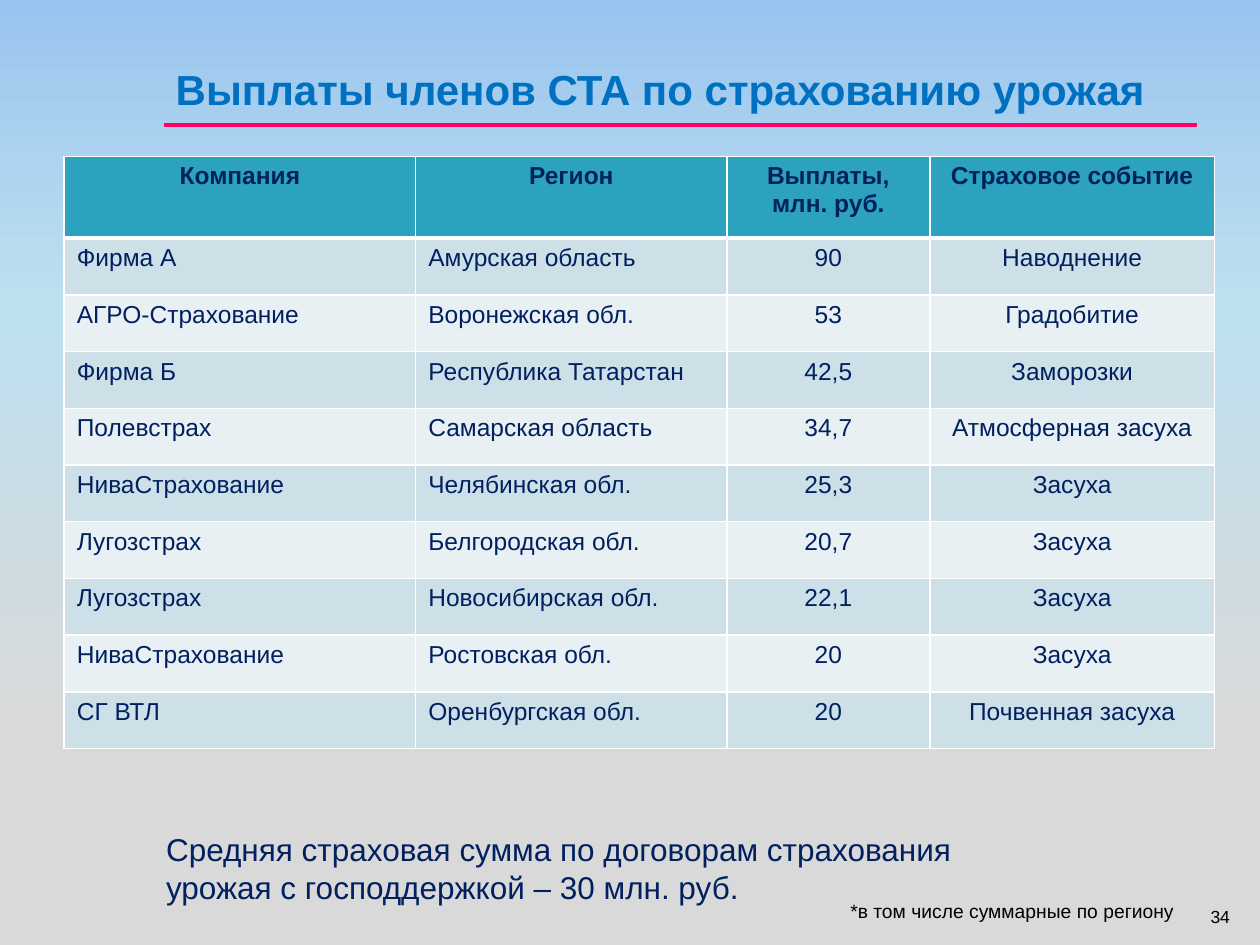
from copy import deepcopy
from typing import NamedTuple

from lxml import etree
from pptx import Presentation
from pptx.dml.color import RGBColor
from pptx.enum.shapes import MSO_CONNECTOR
from pptx.enum.text import MSO_ANCHOR, PP_ALIGN
from pptx.oxml.ns import qn
from pptx.util import Inches, Pt

LEFT, CENTER, RIGHT = PP_ALIGN.LEFT, PP_ALIGN.CENTER, PP_ALIGN.RIGHT
TOP, BOTTOM = MSO_ANCHOR.TOP, MSO_ANCHOR.BOTTOM
STRAIGHT = MSO_CONNECTOR.STRAIGHT

FONT = "Arial"
COLORS = {
    "title": "0070C0", "rule": "FF0066", "navy": "002060", "black": "000000",
    "header": "2DA2BF", "odd": "CDE0E8", "even": "E8F0F4", "border": "FFFFFF",
}
BACKGROUND_STOPS = [(0, "99C4EF"), (0.32, "BDE0EF"), (0.78, "D9D9D9")]


class Payout(NamedTuple):
    company: str
    region: str
    amount: str
    event: str


class Note(NamedTuple):
    left: float
    top: float
    width: float
    height: float
    lines: list[str]
    size: int
    color: str
    align: PP_ALIGN = LEFT
    anchor: MSO_ANCHOR = TOP
    wrap: bool = True


HEADER = Payout("Компания", "Регион", "Выплаты, млн. руб.", "Страховое событие")
PAYOUTS = [
    Payout("Фирма А", "Амурская область", "90", "Наводнение"),
    Payout("АГРО-Страхование", "Воронежская обл.", "53", "Градобитие"),
    Payout("Фирма Б", "Республика Татарстан", "42,5", "Заморозки"),
    Payout("Полевстрах", "Самарская область", "34,7", "Атмосферная засуха"),
    Payout("НиваСтрахование", "Челябинская обл.", "25,3", "Засуха"),
    Payout("Лугозстрах", "Белгородская обл.", "20,7", "Засуха"),
    Payout("Лугозстрах", "Новосибирская обл.", "22,1", "Засуха"),
    Payout("НиваСтрахование", "Ростовская обл.", "20", "Засуха"),
    Payout("СГ ВТЛ", "Оренбургская обл.", "20", "Почвенная засуха"),
]
COLUMN_WIDTHS = [2.79, 2.47, 1.61, 2.26]
COLUMN_ALIGNS = [LEFT, LEFT, CENTER, CENTER]
HEADER_HEIGHT, ROW_HEIGHT = 0.65, 0.45

NOTES = [
    Note(9.46, 7.01, 0.4, 0.4, ["34"], 10, "black", RIGHT, BOTTOM),
    Note(6.65, 7.09, 2.91, 0.29, ["*в том числе суммарные по региону"], 11, "black"),
    Note(1.22, 6.54, 6.57, 0.71,
         ["Средняя страховая сумма по договорам страхования",
          "урожая с господдержкой – 30 млн. руб."], 18, "navy", wrap=False),
]


def rgb(name: str) -> RGBColor:
    return RGBColor.from_string(COLORS[name])


def style(para, size: int, color: str, align: PP_ALIGN, bold: bool = False) -> None:
    para.alignment = align
    para.font.name = FONT
    para.font.size = Pt(size)
    para.font.bold = bold
    para.font.color.rgb = rgb(color)


def paint_background(slide) -> None:
    fill = slide.background.fill
    fill.gradient()
    fill.gradient_angle = 270
    stop_list = slide.element.find(".//" + qn("a:gsLst"))
    stop_list.append(deepcopy(stop_list[-1]))
    for stop, (position, color) in zip(fill.gradient_stops, BACKGROUND_STOPS):
        stop.position = position
        stop.color.rgb = RGBColor.from_string(color)


def add_title(slide, text: str) -> None:
    title = slide.shapes.title
    title.left, title.top = Inches(1.1), Inches(0.45)
    title.width, title.height = Inches(8.28), Inches(0.5)
    title.text_frame.text = text
    title.text_frame.vertical_anchor = TOP
    style(title.text_frame.paragraphs[0], 24, "title", CENTER, bold=True)


def add_rule(slide) -> None:
    rule = slide.shapes.add_connector(
        STRAIGHT, Inches(1.3), Inches(0.99), Inches(9.5), Inches(0.99))
    rule.line.color.rgb = rgb("rule")
    rule.line.width = Pt(2.5)
    etree.SubElement(rule.element.spPr, qn("a:effectLst"))


def set_borders(cell, top: int, bottom: int) -> None:
    properties = cell._tc.get_or_add_tcPr()
    widths = {"a:lnL": 1, "a:lnR": 1, "a:lnT": top, "a:lnB": bottom}
    for index, (tag, width) in enumerate(widths.items()):
        line = etree.Element(qn(tag), w=str(Pt(width)))
        solid = etree.SubElement(line, qn("a:solidFill"))
        etree.SubElement(solid, qn("a:srgbClr"), val=COLORS["border"])
        properties.insert(index, line)


def add_payout_table(slide) -> None:
    rows = [HEADER, *PAYOUTS]
    table = slide.shapes.add_table(
        len(rows), len(COLUMN_WIDTHS), Inches(0.51), Inches(1.24),
        Inches(sum(COLUMN_WIDTHS)), Inches(HEADER_HEIGHT + ROW_HEIGHT * len(PAYOUTS))).table
    for column, width in zip(table.columns, COLUMN_WIDTHS):
        column.width = Inches(width)
    for r, payout in enumerate(rows):
        is_header = r == 0
        table.rows[r].height = Inches(HEADER_HEIGHT if is_header else ROW_HEIGHT)
        fill = "header" if is_header else "odd" if r % 2 else "even"
        for c, text in enumerate(payout):
            cell = table.cell(r, c)
            cell.text = text
            cell.fill.solid()
            cell.fill.fore_color.rgb = rgb(fill)
            set_borders(cell, top=3 if r == 1 else 1, bottom=3 if is_header else 1)
            align = CENTER if is_header else COLUMN_ALIGNS[c]
            style(cell.text_frame.paragraphs[0], 14, "navy", align, bold=is_header)


def add_note(slide, note: Note) -> None:
    box = slide.shapes.add_textbox(
        Inches(note.left), Inches(note.top), Inches(note.width), Inches(note.height))
    frame = box.text_frame
    frame.word_wrap = note.wrap
    frame.vertical_anchor = note.anchor
    frame.text = "\n".join(note.lines)
    for para in frame.paragraphs:
        style(para, note.size, note.color, note.align)


def main() -> None:
    deck = Presentation()
    deck.slide_width, deck.slide_height = Inches(10), Inches(7.5)
    slide = deck.slides.add_slide(deck.slide_layouts[5])  # Title Only

    paint_background(slide)
    add_title(slide, "Выплаты членов СТА по страхованию урожая")
    add_rule(slide)
    add_payout_table(slide)
    for note in NOTES:
        add_note(slide, note)

    deck.save("out.pptx")


if __name__ == "__main__":
    main()
